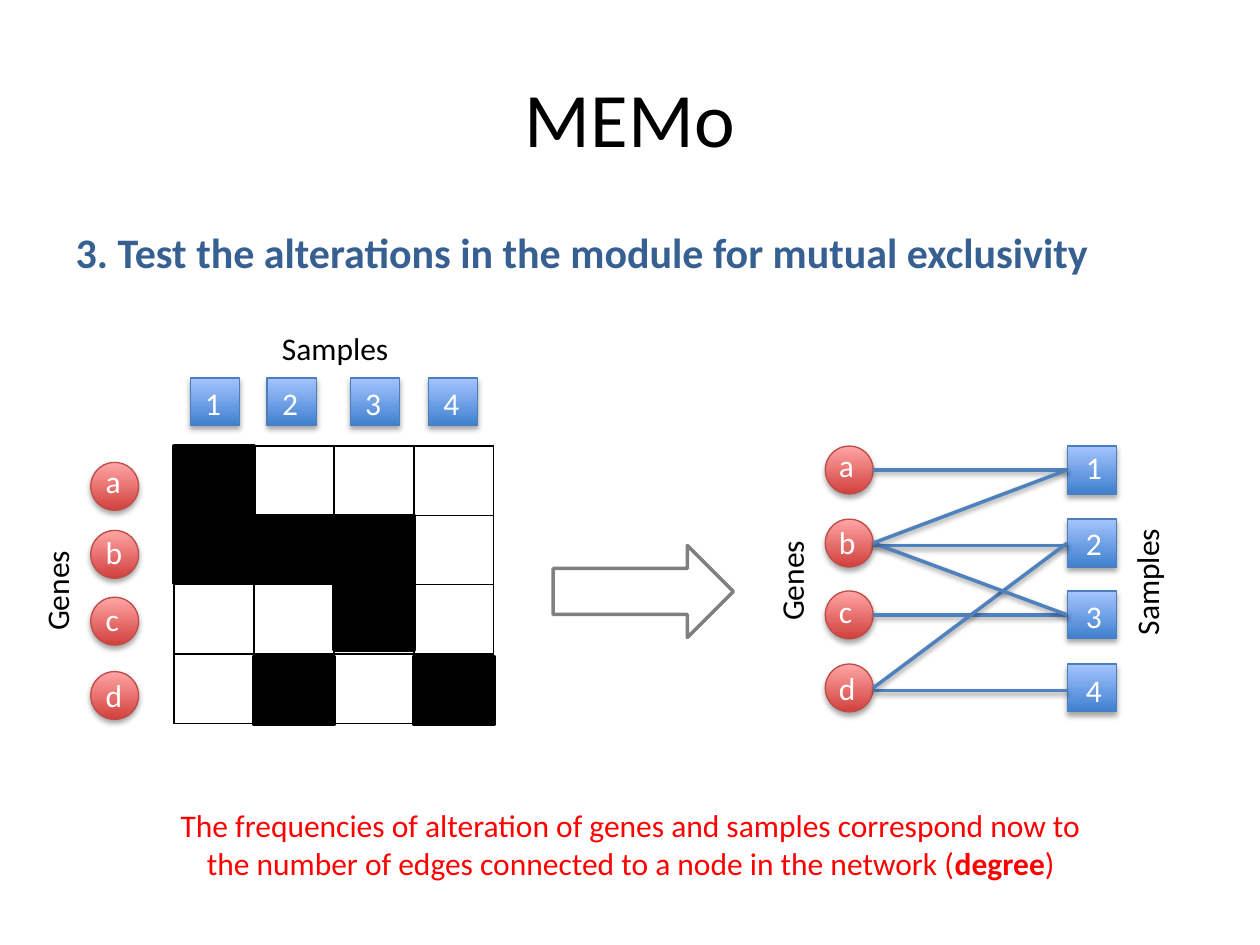
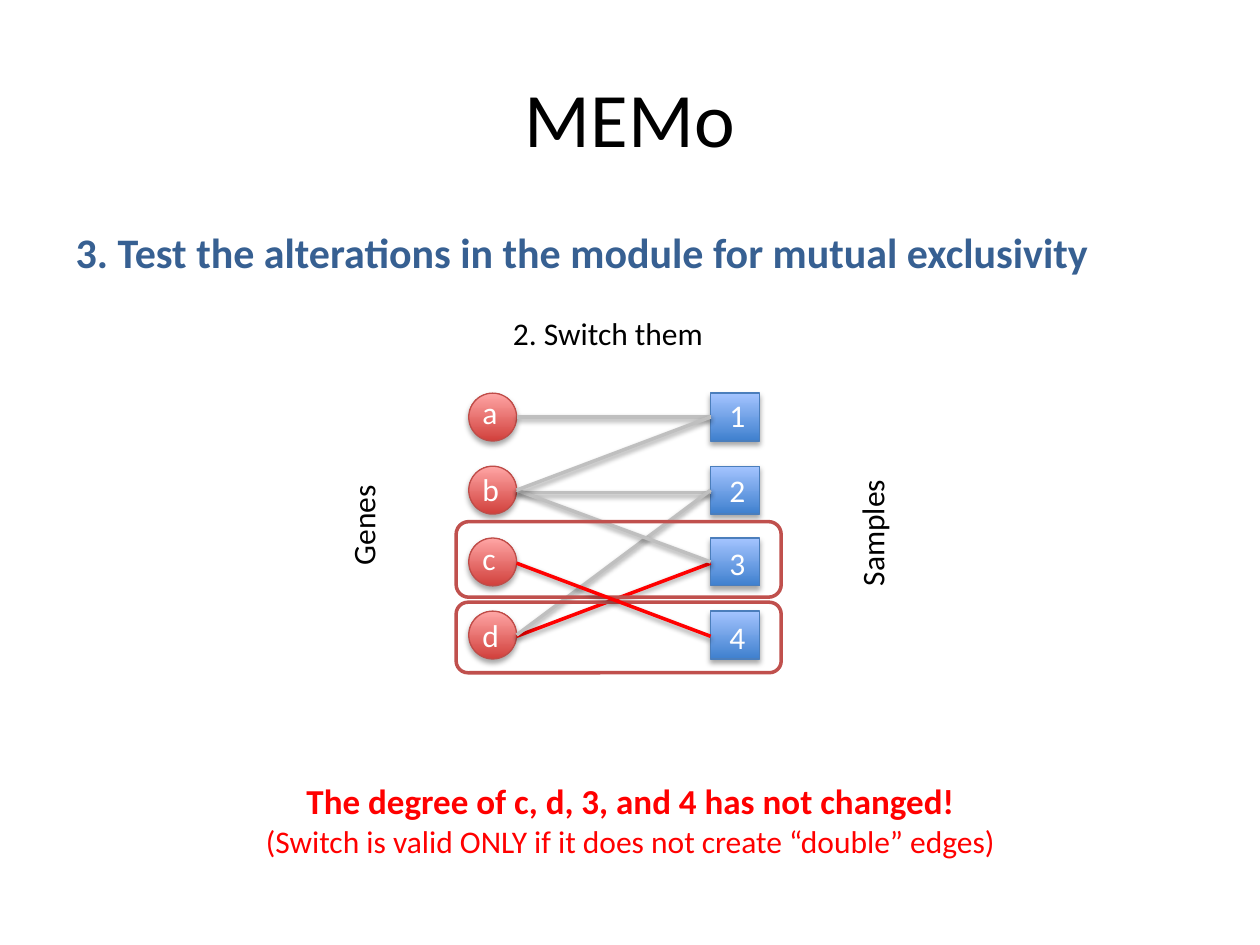
from dataclasses import dataclass
from itertools import product

from lxml import etree
from pptx import Presentation
from pptx.dml.color import RGBColor
from pptx.enum.shapes import MSO_CONNECTOR as Connector, MSO_SHAPE as Shape
from pptx.enum.text import MSO_ANCHOR as Anchor, MSO_AUTO_SIZE as AutoSize, PP_ALIGN as Align
from pptx.oxml.ns import qn
from pptx.util import Inches, Pt

FONT = "Calibri"
BLACK = RGBColor(0x00, 0x00, 0x00)
WHITE = RGBColor(0xFF, 0xFF, 0xFF)
RED = RGBColor(0xFF, 0x00, 0x00)
HEADING_BLUE = RGBColor(0x37, 0x60, 0x92)
EDGE_BLUE = RGBColor(0x4F, 0x81, 0xBD)
FADED_GRAY = RGBColor(0xBF, 0xBF, 0xBF)
ARROW_GRAY = RGBColor(0x80, 0x80, 0x80)
FRAME_RED = RGBColor(0xC0, 0x50, 0x4D)


@dataclass(frozen=True)
class NodeStyle:
    """Outline and colours of one kind of node."""
    preset: Shape
    width: float
    dark: RGBColor
    light: RGBColor
    line: RGBColor


@dataclass(frozen=True)
class Node:
    """A labelled node; the label box is shifted from the node's corner."""
    label: str
    left: float
    top: float
    label_right: float
    label_down: float


@dataclass(frozen=True)
class Edge:
    """A link from a gene to a sample."""
    gene: str
    sample: str
    color: RGBColor
    drop: float = 0


@dataclass(frozen=True)
class Span:
    """A piece of text with one look."""
    text: str
    size: int = 18
    color: RGBColor = BLACK
    bold: bool = False


GENE = NodeStyle(Shape.OVAL, 0.38, RGBColor(0xD1, 0x40, 0x3C),
                 RGBColor(0xFF, 0xA6, 0xA5), RGBColor(0xBF, 0x4C, 0x48))
SAMPLE = NodeStyle(Shape.RECTANGLE, 0.39, RGBColor(0x3F, 0x80, 0xCE),
                   RGBColor(0xA4, 0xC4, 0xFF), RGBColor(0x4B, 0x7E, 0xBC))
GENES, SAMPLES = "abcd", "1234"
NODE_HEIGHT = 0.38
NETWORK_ROWS = (0, 0.58, 1.15, 1.73)
NETWORK_WIDTH = 1.92
GENE_LABEL_DOWN = (-0.05, -0.02, -0.04, -0.01)
SAMPLE_LABEL_DOWN = (-0.03, -0.01, 0, 0.01)
MATRIX_LEFT, MATRIX_TOP, MATRIX_WIDTH, MATRIX_HEIGHT = 1.38, 3.54, 2.54, 2.2
MATRIX_ROWS = (3.54, 4.09, 4.62, 5.21)
ALTERATIONS = ("a1", "b1", "b2", "b3", "c3", "d2", "d4")


def inches(*lengths: float) -> list:
    """Turn plain numbers into lengths."""
    return [Inches(length) for length in lengths]


def add_span(para, span: Span) -> None:
    """Add one formatted run to a paragraph."""
    run = para.add_run()
    run.text = span.text
    run.font.name = FONT
    run.font.size = Pt(span.size)
    run.font.bold = span.bold
    run.font.color.rgb = span.color


def add_text(page, place: tuple, lines: list[list[Span]],
             align: Align = Align.CENTER, rotation: float = 0) -> None:
    """Add a wrapping text box, one list of spans per paragraph."""
    box = page.shapes.add_textbox(*inches(*place))
    box.rotation = rotation
    frame = box.text_frame
    frame.word_wrap = True
    frame.auto_size = AutoSize.SHAPE_TO_FIT_TEXT
    for index, spans in enumerate(lines):
        para = frame.add_paragraph() if index else frame.paragraphs[0]
        para.alignment = align
        for span in spans:
            add_span(para, span)


def add_axis_name(page, text: str, left: float, top: float, rotation: float = 270) -> None:
    """Name a side of a diagram."""
    add_text(page, (left, top, 2.12, 0.4), [[Span(text)]], rotation=rotation)


def add_shadow(shape, opacity: int, distance: float) -> None:
    """Give a finished shape or line a soft shadow below it."""
    effects = etree.SubElement(shape._element.spPr, qn("a:effectLst"))
    shadow = etree.SubElement(effects, qn("a:outerShdw"), blurRad=str(Pt(3.1)),
                              dist=str(Pt(distance)), dir="5400000", rotWithShape="0")
    color = etree.SubElement(shadow, qn("a:srgbClr"), val=str(BLACK))
    etree.SubElement(color, qn("a:alpha"), val=str(opacity * 1000))


def add_outline(page, preset: Shape, place: tuple, line: RGBColor,
                fill: RGBColor | None = None) -> None:
    """Add a flat shape with a thick outline."""
    shape = page.shapes.add_shape(preset, *inches(*place))
    shape.shadow.inherit = False
    if fill is None:
        shape.fill.background()
    else:
        shape.fill.solid()
        shape.fill.fore_color.rgb = fill
    shape.line.color.rgb = line
    shape.line.width = Pt(2)


def add_nodes(page, style: NodeStyle, nodes: list[Node]) -> None:
    """Draw shaded nodes with their labels."""
    for node in nodes:
        shape = page.shapes.add_shape(
            style.preset, *inches(node.left, node.top, style.width, NODE_HEIGHT))
        shape.fill.gradient()
        shape.fill.gradient_angle = 90
        for stop, color in zip(shape.fill.gradient_stops, (style.dark, style.light)):
            stop.color.rgb = color
        shape.line.color.rgb = style.line
        shape.line.width = Pt(0.75)
        add_shadow(shape, 35, 1.8)
        place = (node.left + node.label_right, node.top + node.label_down, 0.38, 0.4)
        add_text(page, place, [[Span(node.label, color=WHITE)]], Align.LEFT)


def add_edge(page, left: float, top: float, edge: Edge) -> None:
    """Link a gene to a sample in the network at the given corner."""
    start, end = (top + NETWORK_ROWS[row] + NODE_HEIGHT / 2 + edge.drop
                  for row in (GENES.index(edge.gene), SAMPLES.index(edge.sample)))
    line = page.shapes.add_connector(
        Connector.STRAIGHT, *inches(left + GENE.width, start, left + NETWORK_WIDTH, end))
    line.line.color.rgb = edge.color
    line.line.width = Pt(2)
    add_shadow(line, 38, 1.6)


def add_network(page, left: float, top: float, edges: list[Edge]) -> None:
    """Draw genes on the left, samples on the right, and their edges."""
    add_nodes(page, SAMPLE, [
        Node(label, left + NETWORK_WIDTH, top + row, 0.05, down)
        for label, row, down in zip(SAMPLES, NETWORK_ROWS, SAMPLE_LABEL_DOWN)])
    add_nodes(page, GENE, [
        Node(label, left, top + row, 0.01, down)
        for label, row, down in zip(GENES, NETWORK_ROWS, GENE_LABEL_DOWN)])
    for edge in edges:
        add_edge(page, left, top, edge)


def add_matrix(page) -> None:
    """Draw the gene by sample grid with its altered cells and headers."""
    table = page.shapes.add_table(4, 4, *inches(
        MATRIX_LEFT, MATRIX_TOP, MATRIX_WIDTH, MATRIX_HEIGHT)).table
    table.first_row = table.horz_banding = False
    for row, column in product(range(4), repeat=2):
        cell = table.cell(row, column)
        properties = cell._tc.get_or_add_tcPr()
        for side in ("a:lnL", "a:lnR", "a:lnT", "a:lnB"):
            border = etree.SubElement(properties, qn(side), w=str(Pt(1)))
            fill = etree.SubElement(border, qn("a:solidFill"))
            etree.SubElement(fill, qn("a:srgbClr"), val=str(BLACK))
        cell.fill.background()
    cell_width = MATRIX_WIDTH / 4
    for gene, sample in ALTERATIONS:
        place = (MATRIX_LEFT + SAMPLES.index(sample) * cell_width,
                 MATRIX_ROWS[GENES.index(gene)], cell_width, 0.54)
        add_outline(page, Shape.RECTANGLE, place, BLACK, BLACK)
    add_nodes(page, GENE, [
        Node(label, 0.72, top, 0.02, down) for label, top, down
        in zip(GENES, (3.67, 4.21, 4.74, 5.33), (-0.05, -0.03, -0.03, -0.01))])
    add_nodes(page, SAMPLE, [
        Node(label, left, 3, 0.02, 0)
        for label, left in zip(SAMPLES, (1.51, 2.12, 2.78, 3.4))])


def add_page(deck):
    """Add a slide with the shared title and heading."""
    page = deck.slides.add_slide(deck.slide_layouts[1])
    title, body = page.placeholders
    contents = (
        (title, (0.5, 0.3, 9, 1.25), Align.CENTER, Anchor.MIDDLE, Span("MEMo", 44)),
        (body, (0.5, 1.75, 9, 4.95), Align.LEFT, Anchor.TOP,
         Span("3. Test the alterations in the module for mutual exclusivity",
              24, HEADING_BLUE, True)))
    for holder, place, align, anchor, span in contents:
        holder.left, holder.top, holder.width, holder.height = inches(*place)
        holder.text_frame.vertical_anchor = anchor
        para = holder.text_frame.paragraphs[0]
        para.alignment = align
        para.space_before = Pt(0)
        add_span(para, span)
    properties = body.text_frame.paragraphs[0]._p.get_or_add_pPr()
    properties.set("marL", "0")
    properties.set("indent", "0")
    etree.SubElement(properties, qn("a:buNone"))
    return page


def build_matrix_page(deck) -> None:
    """Show how the alteration matrix becomes a network."""
    page = add_page(deck)
    links = (("a1", 0), ("b2", 0.02), ("c3", 0), ("d4", 0.02), ("d2", 0), ("b3", 0), ("b1", 0))
    add_network(page, 6.55, 3.54, [Edge(*pair, EDGE_BLUE, drop) for pair, drop in links])
    add_matrix(page)
    add_outline(page, Shape.RIGHT_ARROW, (4.39, 4.33, 1.43, 0.73), ARROW_GRAY, WHITE)
    add_axis_name(page, "Samples", 1.6, 2.56, 0)
    add_axis_name(page, "Genes", -0.61, 4.49)
    add_axis_name(page, "Genes", 5.22, 4.41)
    add_axis_name(page, "Samples", 8.04, 4.42)
    add_text(page, (1.15, 6.35, 7.71, 0.71), [[
        Span("The frequencies of alteration of genes and samples correspond now to "
             "the number of edges connected to a node in the network (", color=RED),
        Span("degree", color=RED, bold=True),
        Span(")", color=RED)]])


def build_switch_page(deck) -> None:
    """Show two edges switched without a change of degree."""
    page = add_page(deck)
    left, top = 3.72, 3.12
    add_network(page, left, top, [
        Edge("a", "1", FADED_GRAY),
        Edge("b", "2", FADED_GRAY, 0.02),
        Edge("d", "3", RED, 0.01),
        *(Edge(*pair, FADED_GRAY) for pair in ("d2", "b3", "b1"))])
    add_axis_name(page, "Genes", 1.82, 3.97)
    add_axis_name(page, "Samples", 5.86, 4.03)
    add_text(page, (0.97, 2.44, 7.71, 0.4), [[Span("2. Switch them")]])
    for frame_top, height in ((4.14, 0.6), (4.78, 0.56)):
        add_outline(page, Shape.ROUNDED_RECTANGLE, (3.62, frame_top, 2.58, height), FRAME_RED)
    add_edge(page, left, top, Edge("c", "4", RED, 0.01))
    add_text(page, (1.15, 6.14, 7.71, 0.74), [
        [Span("The degree of c, d, 3, and 4 has not changed!", 20, RED, True)],
        [Span("(Switch is valid ONLY if it does not create “double” edges)", color=RED)]])


def main() -> None:
    """Build and save the deck."""
    deck = Presentation()
    deck.slide_width, deck.slide_height = inches(10, 7.5)
    build_matrix_page(deck)
    build_switch_page(deck)
    deck.save("out.pptx")


if __name__ == "__main__":
    main()
